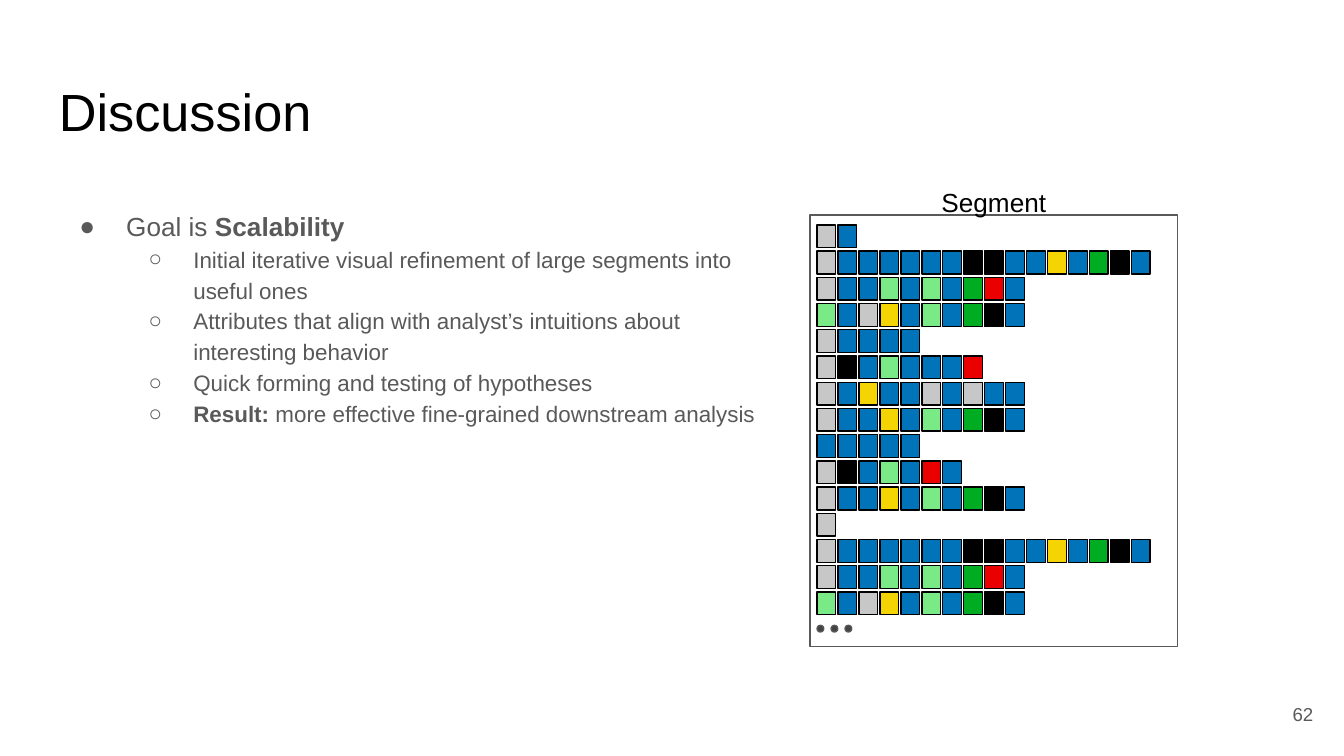
from dataclasses import dataclass

from lxml.etree import SubElement
from pptx import Presentation
from pptx.dml.color import RGBColor
from pptx.enum.shapes import MSO_SHAPE
from pptx.enum.text import MSO_ANCHOR, PP_ALIGN
from pptx.oxml.ns import qn
from pptx.util import Pt


@dataclass(frozen=True)
class Theme:
    font: str = "Arial"
    black: str = "000000"
    gray: str = "595959"
    dot: str = "434343"
    title_size: int = 28
    body_size: int = 14
    detail_size: int = 12
    number_size: int = 10
    line_width: float = 0.75


THEME = Theme()

EVENT_COLORS = {
    "g": "C7C7C7",  # gray
    "b": "0073B9",  # blue
    "k": "000000",  # black
    "y": "F4D403",  # yellow
    "l": "79EA85",  # light green
    "d": "00AC22",  # dark green
    "r": "EA0000",  # red
}

# The first three long sequences come back at the end of the segment.
REPEATED = ["gbbbbbbkkbbybdkb", "gbblblbdrb", "lbgyblbdkb"]
SEQUENCES = [
    "gb", *REPEATED, "gbbbb", "gkblbbbr", "gbybbgbgbb", "gbbyblbdkb",
    "bbbbb", "gkblbrb", "gbbyblbdkb", "g", *REPEATED,
]

# Each point: level, then runs of (text, bold).
POINTS = [
    (0, [("Goal is ", False), ("Scalability", True)]),
    (1, [("Initial iterative visual refinement of large segments into useful ones", False)]),
    (1, [("Attributes that align with analyst’s intuitions about interesting behavior", False)]),
    (1, [("Quick forming and testing of hypotheses", False)]),
    (1, [("Result:", True), (" more effective fine-grained downstream analysis", False)]),
]

# By level: bullet, left margin, hanging indent, type size.
LEVELS = [
    ("●", 36, -25, THEME.body_size),
    ("○", 72, -24, THEME.detail_size),
]


def set_attributes(target, values):
    for name, value in values.items():
        setattr(target, name, value)


def add_text_frame(slide, left, top, width, height, anchor=MSO_ANCHOR.TOP):
    box = slide.shapes.add_textbox(Pt(left), Pt(top), Pt(width), Pt(height))
    inset = Pt(7.2)
    set_attributes(box.text_frame, {
        "word_wrap": True,
        "vertical_anchor": anchor,
        "margin_left": inset,
        "margin_top": inset,
        "margin_right": inset,
        "margin_bottom": inset,
    })
    return box.text_frame


def add_run(paragraph, text, size, color, bold=False):
    run = paragraph.add_run()
    run.text = text
    set_attributes(run.font, {"name": THEME.font, "size": Pt(size), "bold": bold})
    run.font.color.rgb = RGBColor.from_string(color)


def add_label(slide, text, bounds, size, color,
              alignment=PP_ALIGN.LEFT, anchor=MSO_ANCHOR.TOP):
    paragraph = add_text_frame(slide, *bounds, anchor).paragraphs[0]
    paragraph.alignment = alignment
    add_run(paragraph, text, size, color)


def set_bullet(paragraph, character, margin, indent):
    properties = paragraph._p.get_or_add_pPr()
    properties.set("marL", str(Pt(margin)))
    properties.set("indent", str(Pt(indent)))
    bullet_color = SubElement(properties, qn("a:buClr"))
    SubElement(bullet_color, qn("a:srgbClr"), val=THEME.gray)
    SubElement(properties, qn("a:buFont"), typeface=THEME.font)
    SubElement(properties, qn("a:buChar"), char=character)


def add_points(slide, bounds):
    frame = add_text_frame(slide, *bounds)
    for index, (level, runs) in enumerate(POINTS):
        paragraph = frame.add_paragraph() if index else frame.paragraphs[0]
        set_attributes(paragraph, {"level": level, "line_spacing": 1.15})
        character, margin, indent, size = LEVELS[level]
        set_bullet(paragraph, character, margin, indent)
        for text, bold in runs:
            add_run(paragraph, text, size, THEME.gray, bold)


def add_outlined_shape(shapes, kind, bounds, line, fill=None):
    shape = shapes.add_shape(kind, *map(Pt, bounds))
    shape.shadow.inherit = False
    if fill:
        shape.fill.solid()
        shape.fill.fore_color.rgb = RGBColor.from_string(fill)
    else:
        shape.fill.background()
    shape.line.color.rgb = RGBColor.from_string(line)
    shape.line.width = Pt(THEME.line_width)


def add_sequences(slide, left, top):
    """Draw one row of event cells per sequence."""
    column_step, row_step = 11.23, 14.05
    cell_width, cell_height = 10, 12.2
    for row, sequence in enumerate(SEQUENCES):
        for column, event in enumerate(sequence):
            bounds = (left + column * column_step, top + row * row_step,
                      cell_width, cell_height)
            add_outlined_shape(slide.shapes, MSO_SHAPE.RECTANGLE, bounds,
                               THEME.black, EVENT_COLORS[event])


def add_ellipsis_dots(slide, left, top):
    group = slide.shapes.add_group_shape()
    for index in range(3):
        add_outlined_shape(group.shapes, MSO_SHAPE.OVAL,
                           (left + index * 7.5, top, 3.6, 3.6),
                           THEME.gray, THEME.dot)


def main():
    presentation = Presentation()
    set_attributes(presentation, {"slide_width": Pt(720), "slide_height": Pt(405)})
    slide = presentation.slides.add_slide(presentation.slide_layouts[6])

    add_label(slide, "Discussion", (24.5, 35, 671, 45.1), THEME.title_size, THEME.black)
    add_points(slide, (24.5, 103, 389.5, 269))
    add_label(slide, "62", (667.4, 367.2, 43.2, 31), THEME.number_size, THEME.gray,
              PP_ALIGN.RIGHT, MSO_ANCHOR.MIDDLE)

    add_outlined_shape(slide.shapes, MSO_SHAPE.RECTANGLE,
                       (434, 115.2, 196.8, 231.1), THEME.gray)
    add_ellipsis_dots(slide, 437.7, 335)
    add_label(slide, "Segment", (434, 92.9, 196.8, 20.9), THEME.body_size, THEME.black,
              PP_ALIGN.CENTER)
    add_sequences(slide, 437.7, 120.5)

    presentation.save("out.pptx")


if __name__ == "__main__":
    main()
